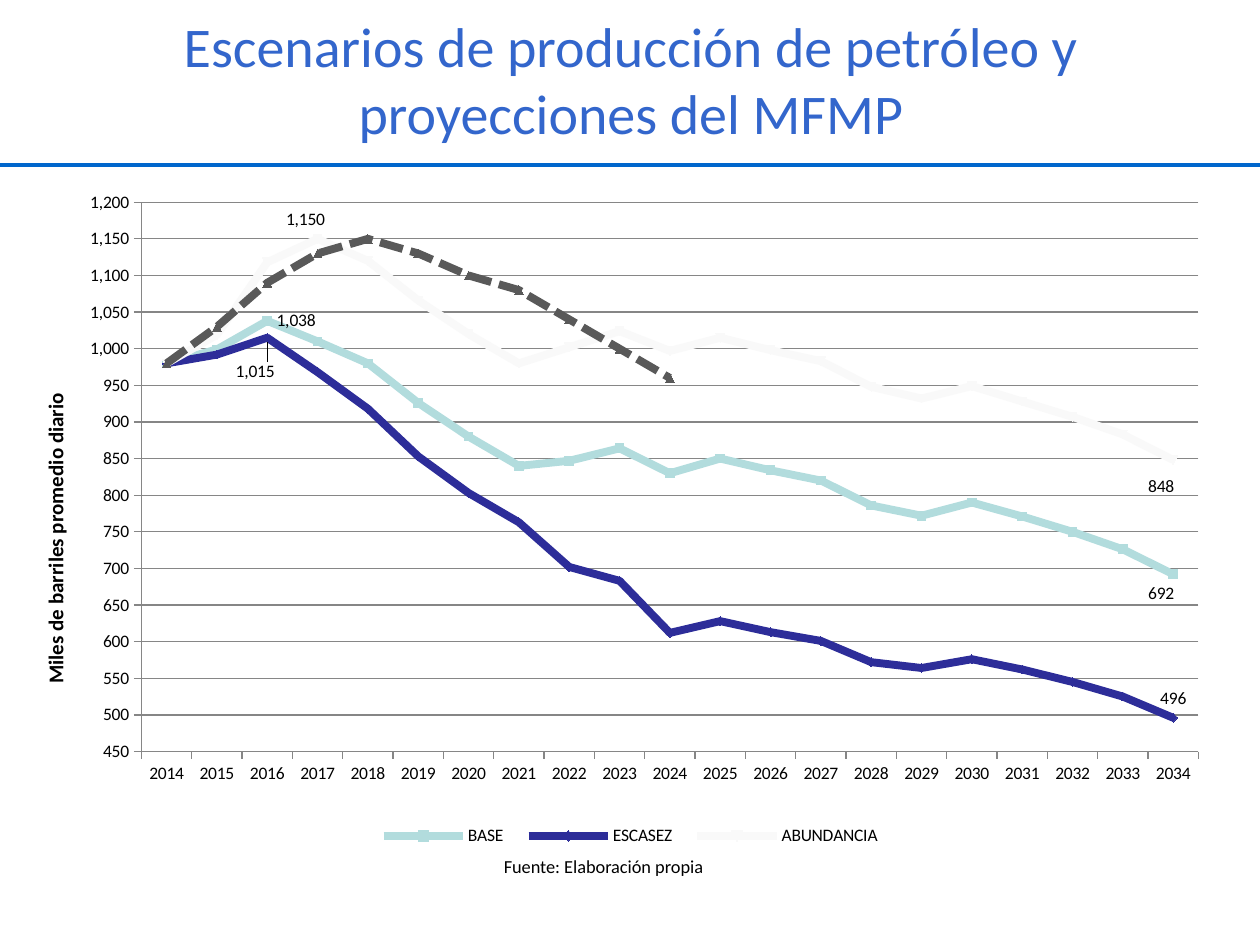
from lxml import etree
from pptx import Presentation
from pptx.chart.data import CategoryChartData
from pptx.dml.color import RGBColor
from pptx.enum.chart import XL_CHART_TYPE, XL_LABEL_POSITION, XL_LEGEND_POSITION, XL_TICK_MARK
from pptx.enum.dml import MSO_LINE
from pptx.enum.text import MSO_ANCHOR, PP_ALIGN
from pptx.oxml import parse_xml
from pptx.oxml.ns import nsdecls, qn
from pptx.util import Inches, Pt

LINE_CHART = XL_CHART_TYPE.LINE
ABOVE, BELOW, RIGHT = XL_LABEL_POSITION.ABOVE, XL_LABEL_POSITION.BELOW, XL_LABEL_POSITION.RIGHT
BOTTOM = XL_LEGEND_POSITION.BOTTOM
OUTSIDE, NO_TICK = XL_TICK_MARK.OUTSIDE, XL_TICK_MARK.NONE
SYS_DASH = MSO_LINE.SQUARE_DOT
MIDDLE, TOP = MSO_ANCHOR.MIDDLE, MSO_ANCHOR.TOP
CENTER, LEFT = PP_ALIGN.CENTER, PP_ALIGN.LEFT

COLORS = {
    "title": "3366CC", "rule": "0066CC", "text": "000000", "grid": "868686",
    "BASE": "B2DCDD", "ESCASEZ": "2D2D99", "ABUNDANCIA": "F9F9F9", "MFMP": "595959",
}
YEARS = range(2014, 2035)
PRODUCTION = {
    "BASE": [980, 999, 1038, 1010, 980, 926, 880, 840, 847, 864, 830, 850, 834, 820,
             786, 772, 790, 771, 750, 726, 692],
    "ESCASEZ": [980, 992, 1015, 968, 918, 853, 803, 763, 702, 683, 612, 628, 613, 601,
                572, 564, 576, 562, 545, 525, 496],
    "ABUNDANCIA": [980, 1019, 1118, 1150, 1120, 1066, 1020, 980, 1002, 1024, 997, 1015,
                   998, 983, 948, 932, 949, 928, 907, 883, 848],
    "MFMP": [980, 1030, 1090, 1130, 1150, 1130, 1100, 1080, 1040, 1000, 960] + [None] * 10,
}
POINT_LABELS = {
    "BASE": [(2, RIGHT, 0, 0), (20, BELOW, -0.01, 0)],
    "ESCASEZ": [(2, BELOW, -0.01, 0.02), (20, ABOVE, 0, 0)],
    "ABUNDANCIA": [(3, ABOVE, -0.01, 0), (20, BELOW, -0.01, 0.01)],
}


def layout_xml(x, y, width=None, height=None, target=None, edge=True):
    """Return a manual chart layout in fractions of the chart area."""
    parts = [("layoutTarget", target)]
    parts += [("xMode", "edge"), ("yMode", "edge")] if edge else []
    parts += [("x", x), ("y", y), ("w", width), ("h", height)]
    inner = "".join(f'<c:{tag} val="{value}"/>' for tag, value in parts if value is not None)
    return parse_xml(f'<c:layout {nsdecls("c")}><c:manualLayout>{inner}</c:manualLayout></c:layout>')


def place(element, layout, after=None):
    """Put a layout into a chart element, behind the named child."""
    for old in element.findall(qn("c:layout")):
        element.remove(old)
    previous = element.find(qn(after)) if after else None
    if previous is None:
        element.insert(0, layout)
    else:
        previous.addnext(layout)


class SlideBuilder:
    """Holds the text style and the current slide."""

    def __init__(self, slide, font="Calibri"):
        self.slide = slide
        self.font_name = font

    def style(self, font, size, color="text", bold=False):
        font.name, font.size, font.bold = self.font_name, Pt(size), bold
        font.color.rgb = RGBColor.from_string(COLORS[color])

    def stroke(self, line, color, width):
        line.color.rgb = RGBColor.from_string(COLORS[color])
        line.width = Pt(width)

    def text(self, text, left, top, width, height, size, color="text", align=LEFT, anchor=TOP):
        shape = self.slide.shapes.add_textbox(*map(Inches, (left, top, width, height)))
        frame = shape.text_frame
        frame.word_wrap = True
        frame.vertical_anchor = anchor
        paragraph = frame.paragraphs[0]
        paragraph.text = text
        paragraph.alignment = align
        self.style(paragraph.font, size, color)

    def rule(self, left, right, top):
        connector = self.slide.shapes.add_connector(1, *map(Inches, (left, top, right, top)))
        self.stroke(connector.line, "rule", 2.25)
        etree.SubElement(connector.element.spPr, qn("a:effectLst"))

    def chart(self, left, top, width, height):
        data = CategoryChartData(number_format="#,##0")
        data.categories = [str(year) for year in YEARS]
        for name, values in PRODUCTION.items():
            data.add_series(name, values)
        frame = self.slide.shapes.add_chart(
            LINE_CHART, *map(Inches, (left, top, width, height)), data)
        chart = frame.chart
        chart.has_title = False
        self.style(chart.font, 10)
        plot = chart.plots[0]
        plot.vary_by_categories = False
        for series in plot.series:
            self.series(series)
        self.axes(chart)
        self.legend(chart)
        place(plot._element.getparent(), layout_xml(0.096, 0.038, 0.873, 0.769, "inner"))

    def series(self, series):
        series.smooth = False
        series.marker.style = None
        self.stroke(series.format.line, series.name, 4.5)
        if series.name == "MFMP":
            series.format.line.dash_style = SYS_DASH
        for index, position, shift_x, shift_y in POINT_LABELS.get(series.name, []):
            series.points[index].data_label.position = position
            if shift_x or shift_y:
                label = series._element.xpath(f"c:dLbls/c:dLbl[c:idx/@val={index}]")[0]
                place(label, layout_xml(shift_x, shift_y, edge=False), "c:idx")
        if series.name in POINT_LABELS:
            series.data_labels.show_value = False

    def axes(self, chart):
        values, years = chart.value_axis, chart.category_axis
        values.minimum_scale, values.maximum_scale, values.major_unit = 450, 1200, 50
        values.tick_labels.number_format = "#,##0"
        values.tick_labels.number_format_is_linked = False
        values.has_major_gridlines = True
        for axis in (values, years):
            axis.major_tick_mark, axis.minor_tick_mark = OUTSIDE, NO_TICK
            self.stroke(axis.format.line, "grid", 0.75)
        self.stroke(values.major_gridlines.format.line, "grid", 0.75)
        title = values.axis_title
        paragraph = title.text_frame.paragraphs[0]
        paragraph.text = "Miles de barriles promedio diario"
        self.style(paragraph.font, 12, bold=True)
        body = title._element.find(".//" + qn("a:bodyPr"))
        body.set("rot", "-5400000")
        body.set("vert", "horz")
        place(title._element, layout_xml(0.01, 0.3), "c:tx")

    def legend(self, chart):
        chart.has_legend = True
        legend = chart.legend
        legend.position = BOTTOM
        legend.include_in_layout = False
        self.style(legend.font, 10)
        place(legend._element, layout_xml(0.28, 0.9, 0.44, 0.05), "c:legendPos")
        legend._element.find(qn("c:legendPos")).addnext(parse_xml(
            f'<c:legendEntry {nsdecls("c")}><c:idx val="3"/><c:delete val="1"/></c:legendEntry>'))


def main():
    presentation = Presentation()
    presentation.slide_width, presentation.slide_height = Inches(10), Inches(7.5)
    builder = SlideBuilder(presentation.slides.add_slide(presentation.slide_layouts[6]))
    builder.rule(0, 10, 1.31)
    builder.text("Escenarios de producción de petróleo y proyecciones del MFMP",
                 0.51, 0, 9, 1.25, 32, "title", CENTER, MIDDLE)
    builder.chart(0.2, 1.39, 9.61, 5.67)
    builder.text("Fuente: Elaboración propia", 3.9, 6.74, 2.83, 0.29, 10.5)
    presentation.save("out.pptx")


if __name__ == "__main__":
    main()
